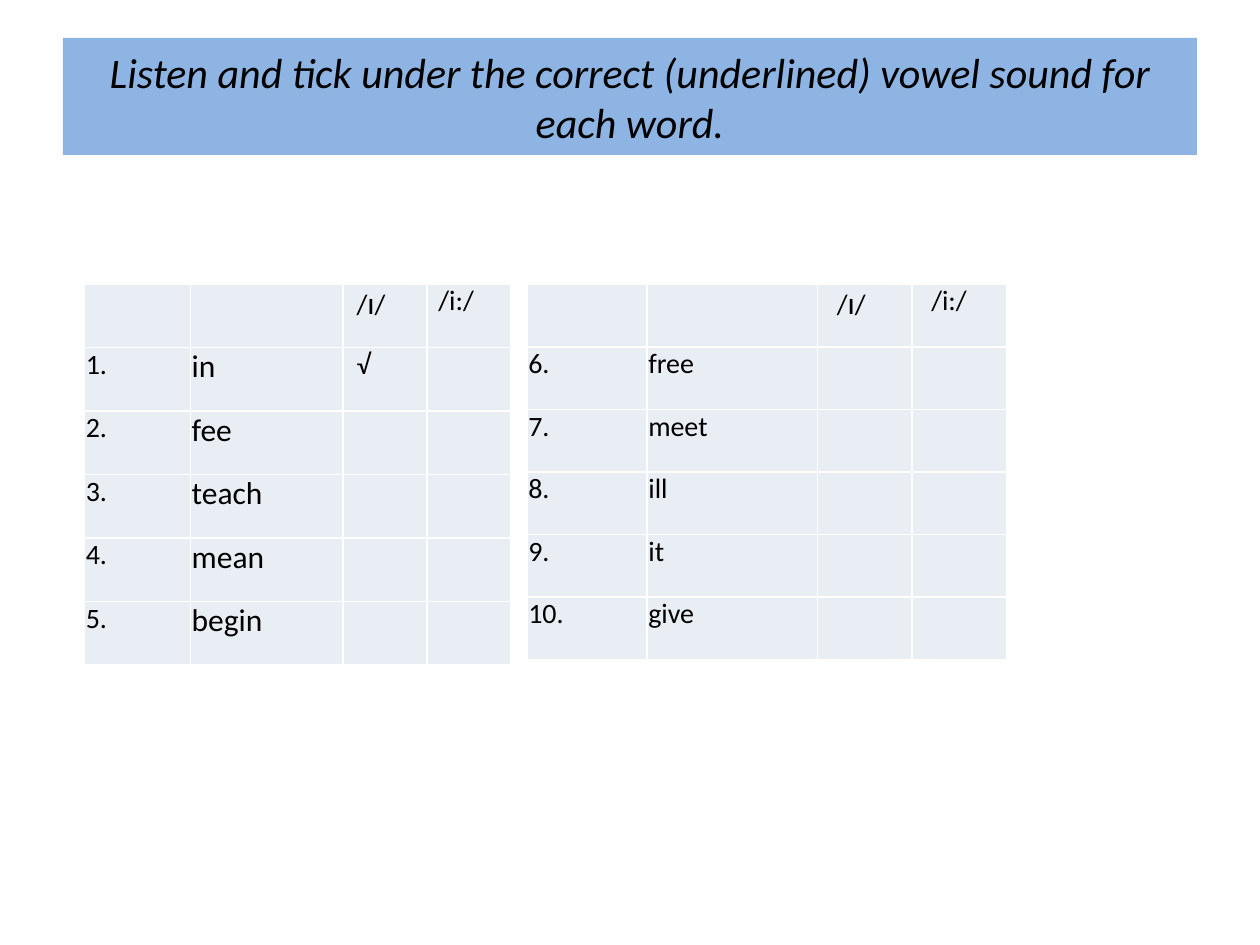
from lxml.etree import SubElement
from pptx import Presentation
from pptx.dml.color import RGBColor
from pptx.enum.shapes import MSO_SHAPE
from pptx.enum.text import MSO_ANCHOR, PP_ALIGN
from pptx.oxml.ns import qn
from pptx.util import Pt

COLORS = {"banner": "8EB4E3", "cell": "E9EDF4", "border": "FFFFFF", "text": "000000"}
FONT = "Calibri"
SHORT_VOWEL = [("/", 16), ("ɪ", 18), ("/", 16)]
LONG_VOWEL = "/i:/"


def color(name):
    return RGBColor.from_string(COLORS[name])


def write_text(frame, text, size=16, italic=False, align=PP_ALIGN.LEFT, indent=0):
    """Write a string, or a list of (string, size) runs, as one paragraph."""
    paragraph = frame.paragraphs[0]
    paragraph.alignment = align
    if indent:
        paragraph._p.get_or_add_pPr().set("marL", str(Pt(indent)))
    runs = [(text, size)] if isinstance(text, str) else text
    for content, run_size in runs:
        run = paragraph.add_run()
        run.text = content
        run.font.name = FONT
        run.font.size = Pt(run_size)
        run.font.italic = italic
        run.font.color.rgb = color("text")


def add_borders(cell):
    properties = cell._tc.get_or_add_tcPr()
    for position, side in enumerate(("lnL", "lnR", "lnT", "lnB")):
        line = properties.makeelement(qn(f"a:{side}"), {"w": str(Pt(1))})
        fill = SubElement(line, qn("a:solidFill"))
        SubElement(fill, qn("a:srgbClr"), val=COLORS["border"])
        properties.insert(position, line)


def add_banner(slide, left, top, width, height, text):
    banner = slide.shapes.add_shape(
        MSO_SHAPE.RECTANGLE, Pt(left), Pt(top), Pt(width), Pt(height))
    banner.shadow.inherit = False
    banner.fill.solid()
    banner.fill.fore_color.rgb = color("banner")
    banner.line.fill.background()
    banner.text_frame.word_wrap = True
    banner.text_frame.vertical_anchor = MSO_ANCHOR.MIDDLE
    write_text(banner.text_frame, text, size=24, italic=True, align=PP_ALIGN.CENTER)


def add_word_table(slide, left, top, column_widths, row_height, words,
                   first_number, word_size, vowel_indents, ticked=()):
    """Place numbered words beside one tick column for each vowel sound."""
    row_count = len(words) + 1
    table = slide.shapes.add_table(
        row_count, len(column_widths), Pt(left), Pt(top),
        Pt(sum(column_widths)), Pt(row_height * row_count)).table
    table.first_row = table.horz_banding = False
    for column, width in zip(table.columns, column_widths):
        column.width = Pt(width)
    for row in table.rows:
        row.height = Pt(row_height)
    for cell in table.iter_cells():
        cell.fill.solid()
        cell.fill.fore_color.rgb = color("cell")
        add_borders(cell)

    def fill_cell(row, column, text, **text_format):
        cell = table.cell(row, column)
        cell.margin_left = cell.margin_right = Pt(0.7)
        cell.margin_top = cell.margin_bottom = 0
        write_text(cell.text_frame, text, **text_format)

    for column, (vowel, indent) in enumerate(zip((SHORT_VOWEL, LONG_VOWEL), vowel_indents), 2):
        fill_cell(0, column, vowel, indent=indent)
    for row, word in enumerate(words, 1):
        fill_cell(row, 0, f"{first_number + row - 1}.")
        fill_cell(row, 1, word, size=word_size)
        if word in ticked:
            fill_cell(row, 2, "√", indent=7.2)


def main():
    presentation = Presentation()
    presentation.slide_width, presentation.slide_height = Pt(720), Pt(540)
    slide = presentation.slides.add_slide(presentation.slide_layouts[6])
    add_banner(slide, 36, 21.6, 648, 67,
               "Listen and tick under the correct (underlined) vowel sound for each word.")
    add_word_table(slide, 48.4, 162.4, (60.5, 87, 48, 48), 36.3,
                   ("in", "fee", "teach", "mean", "begin"), first_number=1,
                   word_size=18, vowel_indents=(7.2, 6), ticked=("in",))
    add_word_table(slide, 301.2, 162.4, (68.6, 97.2, 54, 54.4), 35.8,
                   ("free", "meet", "ill", "it", "give"), first_number=6,
                   word_size=16, vowel_indents=(10.5, 10.5))
    presentation.save("out.pptx")


if __name__ == "__main__":
    main()
